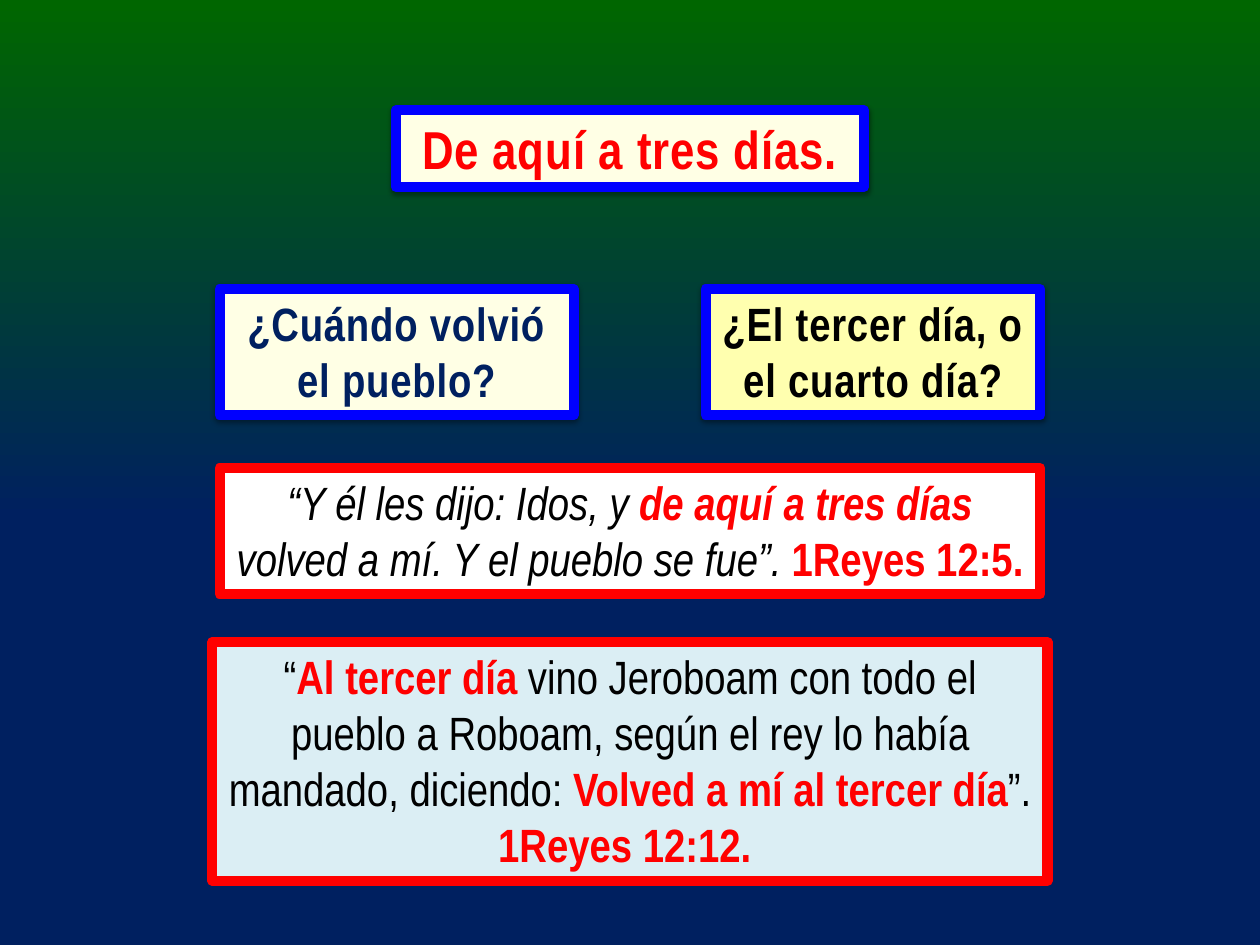
from dataclasses import dataclass

from lxml import etree
from pptx import Presentation
from pptx import util as u
from pptx.dml.color import RGBColor
from pptx.enum import shapes, text
from pptx.oxml import ns

SLIDE_WIDTH = 10.5
SLIDE_HEIGHT = SLIDE_WIDTH * 3 / 4

RED = RGBColor(0xFF, 0x00, 0x00)
BLUE = RGBColor(0x00, 0x00, 0xFF)
BLACK = RGBColor(0x00, 0x00, 0x00)
WHITE = RGBColor(0xFF, 0xFF, 0xFF)
GREEN = RGBColor(0x00, 0x66, 0x00)
NAVY = RGBColor(0x00, 0x20, 0x60)
CREAM = RGBColor(0xFF, 0xFF, 0xE5)
YELLOW = RGBColor(0xFF, 0xFF, 0xAF)
PALE_BLUE = RGBColor(0xDB, 0xEE, 0xF4)


@dataclass(frozen=True)
class Phrase:
    words: str
    color: RGBColor = BLACK
    bold: bool = False
    italic: bool = False
    outline: RGBColor = BLACK
    outline_points: float = 0.75


@dataclass(frozen=True)
class Box:
    left: float
    top: float
    width: float
    height: float
    fill: RGBColor
    border: RGBColor
    phrases: tuple[Phrase, ...]
    size: int = 28
    heading: bool = False


def emphasis(words: str, italic: bool = False) -> Phrase:
    return Phrase(words, RED, True, italic, RED, 0.25)


BOXES = (
    Box(5.88, 2.41, 2.79, 1.05, YELLOW, BLUE, (
        Phrase("¿El tercer día, o el cuarto día?", bold=True, outline_points=0.25),
    ), heading=True),
    Box(1.77, 5.35, 6.96, 1.99, PALE_BLUE, RED, (
        Phrase("“"),
        emphasis("Al tercer día "),
        Phrase("vino Jeroboam con todo el pueblo a Roboam, "
               "según el rey lo había mandado, diciendo: "),
        emphasis("Volved a mí al tercer día"),
        Phrase("”. "),
        emphasis("1Reyes 12:12. "),
    )),
    Box(3.3, 0.92, 3.9, 0.64, CREAM, BLUE, (
        Phrase("De aquí a tres días.", RED, True, outline=RED, outline_points=1),
    ), size=32, heading=True),
    Box(1.83, 3.9, 6.84, 1.05, WHITE, RED, (
        Phrase("“Y él les dijo: Idos, y ", italic=True),
        emphasis("de aquí a tres días ", italic=True),
        Phrase("volved a mí. Y el pueblo se fue”. ", italic=True),
        emphasis("1Reyes 12:5."),
    )),
    Box(1.83, 2.41, 2.95, 1.05, CREAM, BLUE, (
        Phrase("¿Cuándo volvió el pueblo?", NAVY, True, outline_points=0.25),
    ), heading=True),
)


def add_color(parent, color: RGBColor):
    return etree.SubElement(parent, ns.qn("a:srgbClr"), val=str(color))


def add_shadow(shape) -> None:
    effects = shape._element.spPr.find(ns.qn("a:effectLst"))
    shadow = etree.SubElement(
        effects, ns.qn("a:outerShdw"), blurRad=str(u.Pt(3.1)),
        dist=str(u.Pt(1.6)), dir="5400000", rotWithShape="0")
    etree.SubElement(add_color(shadow, BLACK), ns.qn("a:alpha"), val="38000")


def add_phrase(paragraph, phrase: Phrase, spaced: bool) -> None:
    run = paragraph.add_run()
    run.text = phrase.words
    run.font.bold = phrase.bold
    run.font.italic = phrase.italic
    run.font.color.rgb = phrase.color
    properties = run.font._element
    if spaced:
        properties.set("spc", "50")
    outline = etree.Element(ns.qn("a:ln"), w=str(u.Pt(phrase.outline_points)))
    add_color(etree.SubElement(outline, ns.qn("a:solidFill")), phrase.outline)
    properties.insert(0, outline)


def add_box(slide, box: Box) -> None:
    shape = slide.shapes.add_shape(
        shapes.MSO_SHAPE.RECTANGLE, u.Inches(box.left), u.Inches(box.top),
        u.Inches(box.width), u.Inches(box.height))
    shape.fill.solid()
    shape.fill.fore_color.rgb = box.fill
    shape.line.color.rgb = box.border
    shape.line.width = u.Pt(6)
    shape.shadow.inherit = False
    if box.heading:
        add_shadow(shape)
    frame = shape.text_frame
    frame.word_wrap = True
    frame.auto_size = text.MSO_AUTO_SIZE.SHAPE_TO_FIT_TEXT
    frame.vertical_anchor = text.MSO_ANCHOR.TOP
    paragraph = frame.paragraphs[0]
    paragraph.alignment = text.PP_ALIGN.CENTER
    paragraph.font.name = "Arial Narrow"
    paragraph.font.size = u.Pt(box.size)
    for phrase in box.phrases:
        add_phrase(paragraph, phrase, box.heading)


def paint_background(slide) -> None:
    fill = slide.background.fill
    fill.gradient()
    fill.gradient_angle = 270
    for stop, color, position in zip(fill.gradient_stops, (GREEN, NAVY), (0, 0.55)):
        stop.color.rgb = color
        stop.position = position


def main() -> None:
    presentation = Presentation()
    presentation.slide_width = u.Inches(SLIDE_WIDTH)
    presentation.slide_height = u.Inches(SLIDE_HEIGHT)
    slide = presentation.slides.add_slide(presentation.slide_layouts[6])
    paint_background(slide)
    for box in BOXES:
        add_box(slide, box)
    presentation.save("out.pptx")


if __name__ == "__main__":
    main()
